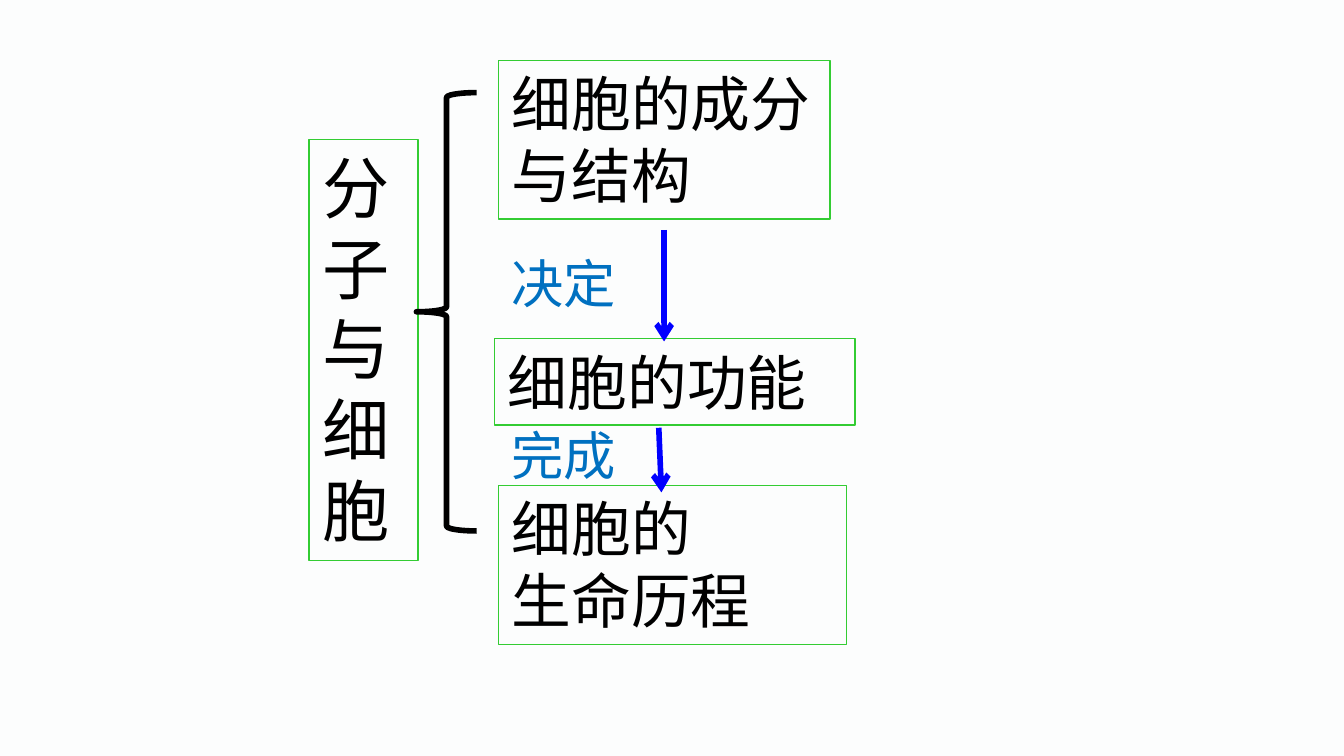
"""Build a slide that maps the parts of the topic molecules and cells."""
from dataclasses import dataclass

from lxml.etree import SubElement
from pptx import Presentation
from pptx.dml.color import RGBColor
from pptx.enum.shapes import MSO_CONNECTOR as Connector, MSO_SHAPE as Shape
from pptx.enum.text import MSO_AUTO_SIZE as AutoSize
from pptx.oxml.ns import qn
from pptx.util import Cm, Pt


@dataclass(frozen=True)
class Theme:
    background: RGBColor = RGBColor(0xFC, 0xFD, 0xFD)
    ink: RGBColor = RGBColor(0, 0, 0)
    border: RGBColor = RGBColor(0x33, 0xCC, 0x33)
    arrow: RGBColor = RGBColor(0, 0, 0xFF)
    label: RGBColor = RGBColor(0x00, 0x70, 0xC0)
    font: str = "Arial"
    topic_size: Pt = Pt(36)
    part_size: Pt = Pt(32)
    label_size: Pt = Pt(28)
    thin: Pt = Pt(0.75)
    thick: Pt = Pt(3)


THEME = Theme()


def add_text(slide, box, lines, size, color):
    shape = slide.shapes.add_textbox(*map(Cm, box))
    frame = shape.text_frame
    frame.word_wrap = True
    frame.auto_size = AutoSize.SHAPE_TO_FIT_TEXT
    frame.text = "\n".join(lines)
    for paragraph in frame.paragraphs:
        paragraph.font.name = THEME.font
        paragraph.font.size = size
        paragraph.font.color.rgb = color
    return shape


def add_framed_text(slide, box, lines, size):
    shape = add_text(slide, box, lines, size, THEME.ink)
    shape.line.color.rgb = THEME.border
    shape.line.width = THEME.thin


def add_brace(slide, box):
    brace = slide.shapes.add_shape(Shape.LEFT_BRACE, *map(Cm, box))
    brace.shadow.inherit = False
    brace.adjustments[0] = 0.08
    brace.fill.background()
    brace.line.color.rgb = THEME.ink
    brace.line.width = THEME.thick


def add_arrow(slide, start, end):
    arrow = slide.shapes.add_connector(Connector.STRAIGHT, *map(Cm, start + end))
    arrow.line.color.rgb = THEME.arrow
    arrow.line.width = THEME.thick
    SubElement(arrow.line._get_or_add_ln(), qn("a:tailEnd"), type="arrow")
    SubElement(arrow._element.spPr, qn("a:effectLst"))


def main():
    presentation = Presentation()
    presentation.slide_width, presentation.slide_height = Cm(25.4), Cm(14.28)
    slide = presentation.slides.add_slide(presentation.slide_layouts[6])
    slide.background.fill.solid()
    slide.background.fill.fore_color.rgb = THEME.background

    add_framed_text(slide, (5.84, 2.64, 2.06, 7.95), "分子与细胞", THEME.topic_size)
    parts = [
        ((9.42, 1.14, 6.27, 3), ["细胞的成分", "与结构"]),
        ((9.35, 6.4, 6.81, 1.63), ["细胞的功能"]),
        ((9.42, 9.17, 6.58, 3), ["细胞的", "生命历程"]),
    ]
    for box, lines in parts:
        add_framed_text(slide, box, lines, THEME.part_size)

    add_brace(slide, (7.87, 1.75, 1.14, 8.28))
    links = [
        ("决定", 4.62, (12.55, 4.34), (12.55, 6.45)),
        ("完成", 7.87, (12.45, 8.08), (12.5, 9.3)),
    ]
    for label, top, start, end in links:
        add_arrow(slide, start, end)
        add_text(slide, (9.42, top, 2.95, 1.45), [label], THEME.label_size, THEME.label)

    presentation.save("out.pptx")


if __name__ == "__main__":
    main()
